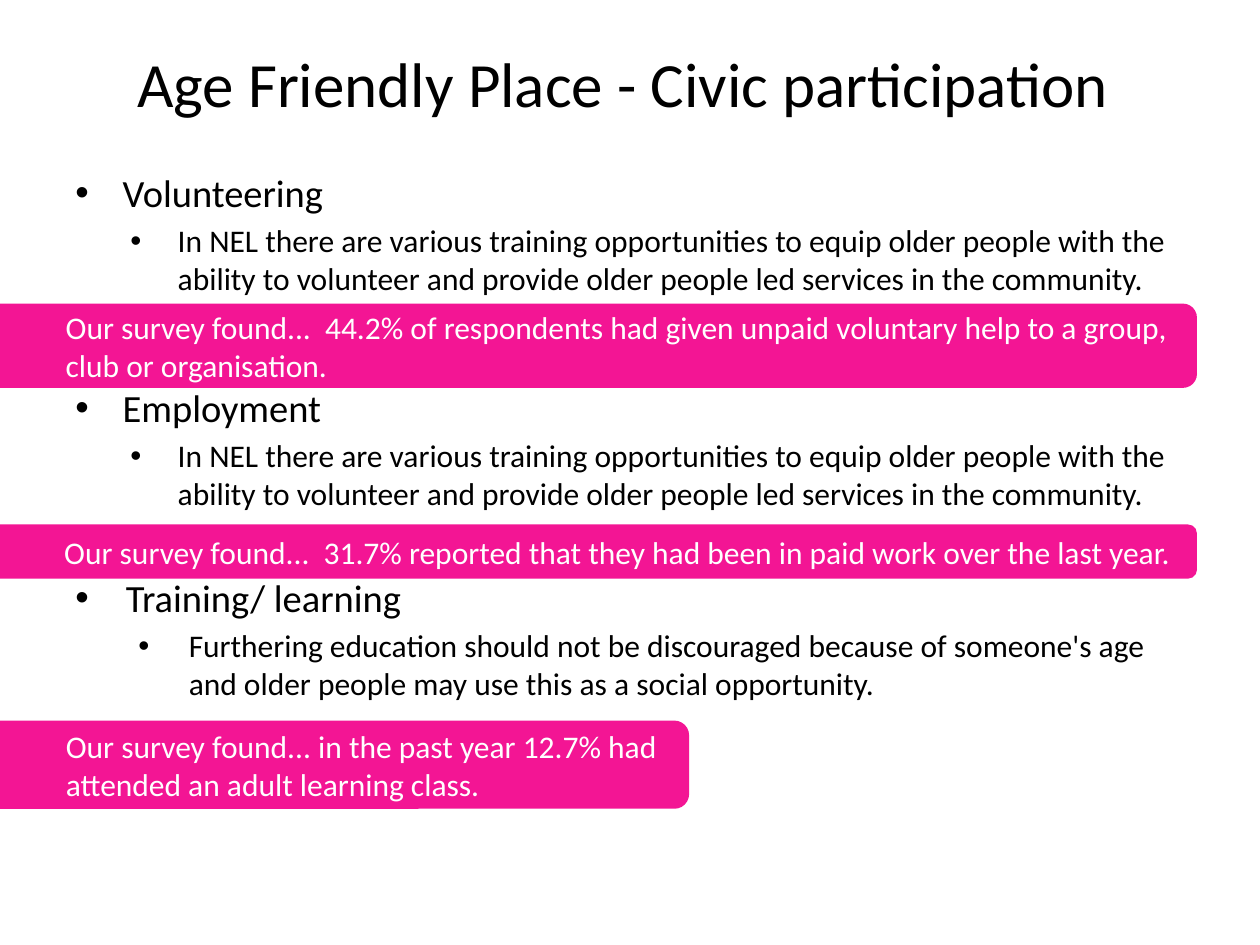
from lxml.etree import SubElement
from pptx import Presentation
from pptx.dml.color import RGBColor
from pptx.enum.shapes import MSO_SHAPE
from pptx.enum.text import MSO_ANCHOR, PP_ALIGN
from pptx.oxml.ns import qn
from pptx.util import Pt

BLACK = RGBColor(0x00, 0x00, 0x00)
WHITE = RGBColor(0xFF, 0xFF, 0xFF)
PINK = RGBColor(0xF3, 0x15, 0x94)

VOLUNTEER_TRAINING = (
    "In NEL there are various training opportunities to equip older people with "
    "the ability to volunteer and provide older people led services in the community."
)
# text, level, size, left margin, hanging indent, space before
TOPICS = [
    ("Volunteering", 0, 22, 27, 27, 0),
    (VOLUNTEER_TRAINING, 1, 18, 58.5, 27, 3.6),
    ("Employment", 0, 22, 27, 27, 49.6),
    (VOLUNTEER_TRAINING, 1, 18, 58.5, 27, 3.6),
    ("Training/ learning", 0, 22, 28.8, 28.8, 35.4),
    ("Furthering education should not be discouraged because of someone's age "
     "and older people may use this as a social opportunity.", 1, 18, 64.8, 28.8, 3.6),
]
# text, top, width, height
FINDINGS = [
    ("Our survey found...  44.2% of respondents had given unpaid voluntary help "
     "to a group, club or organisation.", 173.5, 697.7, 48.2),
    ("Our survey found...  31.7% reported that they had been in paid work "
     "over the last year.", 299.7, 697.7, 31),
    ("Our survey found... in the past year 12.7% had attended an adult "
     "learning class.", 411.8, 407.5, 50.4),
]


class SlideBuilder:
    font = "Calibri"

    def __init__(self, slide):
        self.slide = slide

    def set_format(self, obj, values):
        for name, value in values.items():
            setattr(obj, name, value)

    def add_text(self, p, text, size, color):
        r = p.add_run()
        r.text = text
        self.set_format(r.font, {"name": self.font, "size": Pt(size)})
        r.font.color.rgb = color

    def text_frame(self, left, top, width, height, anchor):
        box = self.slide.shapes.add_textbox(Pt(left), Pt(top), Pt(width), Pt(height))
        tf = box.text_frame
        self.set_format(tf, {"word_wrap": True, "vertical_anchor": anchor})
        return tf

    def title(self, text, *bounds):
        p = self.text_frame(*bounds, MSO_ANCHOR.MIDDLE).paragraphs[0]
        p.alignment = PP_ALIGN.CENTER
        self.add_text(p, text, 36, BLACK)

    def bullets(self, items, *bounds):
        tf = self.text_frame(*bounds, MSO_ANCHOR.TOP)
        for i, (text, level, size, margin, hang, before) in enumerate(items):
            p = tf.add_paragraph() if i else tf.paragraphs[0]
            self.set_format(p, {"level": level, "space_before": Pt(before)})
            pPr = p._p.get_or_add_pPr()
            pPr.set("marL", str(Pt(margin)))
            pPr.set("indent", str(-Pt(hang)))
            SubElement(pPr, qn("a:buFont")).set("typeface", "Arial")
            SubElement(pPr, qn("a:buChar")).set("char", "•")
            self.add_text(p, text, size, BLACK)

    def banner(self, text, left, top, width, height):
        sp = self.slide.shapes.add_shape(
            MSO_SHAPE.ROUNDED_RECTANGLE, Pt(left), Pt(top), Pt(width), Pt(height))
        sp.shadow.inherit = False
        sp.fill.solid()
        sp.fill.fore_color.rgb = PINK
        sp.line.fill.background()
        tf = sp.text_frame
        self.set_format(tf, {
            "word_wrap": True, "vertical_anchor": MSO_ANCHOR.MIDDLE,
            "margin_left": Pt(7.2), "margin_right": Pt(8.6),
            "margin_top": Pt(5.8), "margin_bottom": Pt(5.8)})
        p = tf.paragraphs[0]
        p.alignment = PP_ALIGN.LEFT
        p._p.get_or_add_pPr().set("marL", str(Pt(41.8)))
        self.add_text(p, text, 18, WHITE)


def main():
    prs = Presentation()
    prs.slide_width, prs.slide_height = Pt(720), Pt(540)
    s = SlideBuilder(prs.slides.add_slide(prs.slide_layouts[6]))
    s.title("Age Friendly Place - Civic participation ", 36, 2.2, 648, 90)
    s.bullets(TOPICS, 36, 93, 648, 390)
    for text, top, width, height in FINDINGS:
        s.banner(text, -13.7, top, width, height)
    prs.save("out.pptx")


if __name__ == "__main__":
    main()
